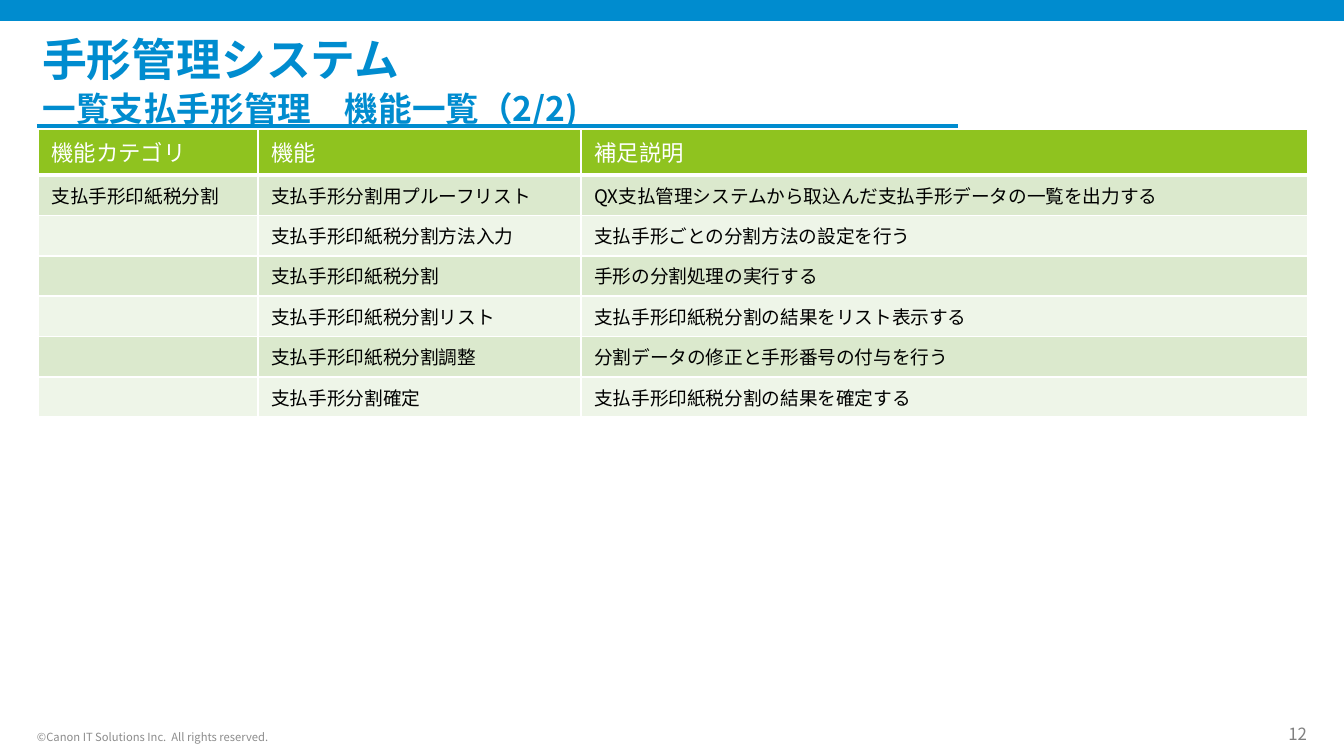
from typing import NamedTuple

from lxml.etree import SubElement
from pptx import Presentation
from pptx.dml.color import RGBColor
from pptx.enum.shapes import MSO_CONNECTOR, MSO_SHAPE
from pptx.enum.text import MSO_ANCHOR, MSO_AUTO_SIZE, PP_ALIGN
from pptx.oxml.ns import qn
from pptx.util import Emu, Pt

FONT = "Noto Sans CJK JP"
BLUE = RGBColor(0x00, 0x8C, 0xCF)
GREEN = RGBColor(0x8F, 0xC3, 0x1F)
MID = RGBColor(0xDB, 0xE9, 0xCD)
PALE = RGBColor(0xEE, 0xF5, 0xE8)
WHITE = RGBColor(0xFF, 0xFF, 0xFF)
BLACK = RGBColor(0x00, 0x00, 0x00)
GREY = RGBColor(0x80, 0x80, 0x80)
SILVER = RGBColor(0x8C, 0x8C, 0x8C)

WIDE, HIGH = 1344, 756
SCALE = 9144000 / WIDE


class Box(NamedTuple):
    left: int
    top: int
    width: int
    height: int


class Style(NamedTuple):
    size: int
    color: RGBColor
    bold: bool = False
    align: PP_ALIGN = PP_ALIGN.LEFT


class Entry(NamedTuple):
    group: str
    name: str
    note: str


HEAD = Entry("機能カテゴリ", "機能", "補足説明")
ENTRIES = [
    Entry("支払手形印紙税分割", "支払手形分割用プルーフリスト",
          "QX支払管理システムから取込んだ支払手形データの一覧を出力する"),
    Entry("", "支払手形印紙税分割方法入力", "支払手形ごとの分割方法の設定を行う"),
    Entry("", "支払手形印紙税分割", "手形の分割処理の実行する"),
    Entry("", "支払手形印紙税分割リスト", "支払手形印紙税分割の結果をリスト表示する"),
    Entry("", "支払手形印紙税分割調整", "分割データの修正と手形番号の付与を行う"),
    Entry("", "支払手形分割確定", "支払手形印紙税分割の結果を確定する"),
]
COLS = [220, 323, 727]
HEAD_ROW, BODY_ROW = 45, 40


def px(n: int) -> Emu:
    return Emu(round(n * SCALE))


def place(shape, box: Box) -> None:
    shape.left, shape.top, shape.width, shape.height = map(px, box)


def write(frame, text: str, style: Style) -> None:
    frame.text = text
    para = frame.paragraphs[0]
    para.alignment = style.align
    para.space_before = Pt(0)
    for run in para.runs:
        font = run.font
        font.name, font.size, font.bold = FONT, Pt(style.size), style.bold
        font.color.rgb = style.color
        SubElement(font._element, qn("a:ea"), typeface=FONT)
    if not text:
        # Keeps an empty cell as low as its neighbours
        SubElement(para._p, qn("a:endParaRPr"), sz=str(style.size * 100))


def set_frame(frame, anchor: MSO_ANCHOR, inset: bool = False) -> None:
    frame.word_wrap = True
    frame.auto_size = MSO_AUTO_SIZE.NONE
    frame.vertical_anchor = anchor
    if not inset:
        frame.margin_left = frame.margin_right = 0
        frame.margin_top = frame.margin_bottom = 0


def add_label(slide, box: Box, text: str, style: Style) -> None:
    frame = slide.shapes.add_textbox(*map(px, box)).text_frame
    set_frame(frame, MSO_ANCHOR.BOTTOM)
    write(frame, text, style)


def set_edges(cell, low: int) -> None:
    props = cell._tc.get_or_add_tcPr()
    widths = {"a:lnL": 1, "a:lnR": 1, "a:lnT": 1, "a:lnB": low}
    for i, (tag, width) in enumerate(widths.items()):
        edge = SubElement(props, qn(tag), w=str(Pt(width)))
        fill = SubElement(edge, qn("a:solidFill"))
        SubElement(fill, qn("a:srgbClr"), val=str(WHITE))
        props.remove(edge)
        props.insert(i, edge)


def fill_row(table, i: int, entry: Entry, style: Style, fill: RGBColor) -> None:
    for j, text in enumerate(entry):
        cell = table.cell(i, j)
        cell.fill.solid()
        cell.fill.fore_color.rgb = fill
        cell.vertical_anchor = MSO_ANCHOR.BOTTOM
        write(cell.text_frame, text, style)
        set_edges(cell, 1 if i else 3)


def add_grid(slide, left: int, top: int) -> None:
    high = HEAD_ROW + BODY_ROW * len(ENTRIES)
    box = Box(left, top, sum(COLS), high)
    table = slide.shapes.add_table(
        len(ENTRIES) + 1, len(COLS), *map(px, box)).table
    table.first_row = table.horz_banding = False
    for col, width in zip(table.columns, COLS):
        col.width = px(width)
    for i, row in enumerate(table.rows):
        row.height = px(BODY_ROW if i else HEAD_ROW)
    fill_row(table, 0, HEAD, Style(12, WHITE), GREEN)
    for i, entry in enumerate(ENTRIES, 1):
        fill_row(table, i, entry, Style(10, BLACK), MID if i % 2 else PALE)


def main() -> None:
    deck = Presentation()
    deck.slide_width, deck.slide_height = px(WIDE), px(HIGH)
    slide = deck.slides.add_slide(deck.slide_layouts[1])
    shapes = slide.shapes

    # Top band and rule under the heading
    band = shapes.add_shape(MSO_SHAPE.RECTANGLE, 0, 0, px(WIDE), px(21))
    band.shadow.inherit = False
    band.fill.solid()
    band.fill.fore_color.rgb = BLUE
    band.line.fill.background()
    rule = shapes.add_connector(
        MSO_CONNECTOR.STRAIGHT, px(37), px(126), px(958), px(126))
    rule.line.color.rgb = BLUE
    rule.line.width = Pt(2)
    SubElement(rule._element.spPr, qn("a:effectLst"))

    # Title and subtitle
    title = shapes.title
    place(title, Box(42, 32, 1058, 53))
    set_frame(title.text_frame, MSO_ANCHOR.MIDDLE)
    write(title.text_frame, "手形管理システム", Style(24, BLUE, True))
    body = slide.placeholders[1]
    place(body, Box(29, 85, 899, 47))
    set_frame(body.text_frame, MSO_ANCHOR.MIDDLE, inset=True)
    write(body.text_frame, "一覧支払手形管理　機能一覧（2/2)", Style(18, BLUE, True))
    props = body.text_frame.paragraphs[0]._p.get_or_add_pPr()
    props.set("marL", "0")
    props.set("indent", "0")
    SubElement(props, qn("a:buNone"))

    # Function table
    add_grid(slide, 38, 129)

    # Footer
    add_label(slide, Box(37, 724, 317, 20),
              "©Canon IT Solutions Inc.  All rights reserved.", Style(6, SILVER))
    add_label(slide, Box(1254, 724, 53, 20), "12",
              Style(9, GREY, align=PP_ALIGN.RIGHT))

    deck.save("out.pptx")


if __name__ == "__main__":
    main()
